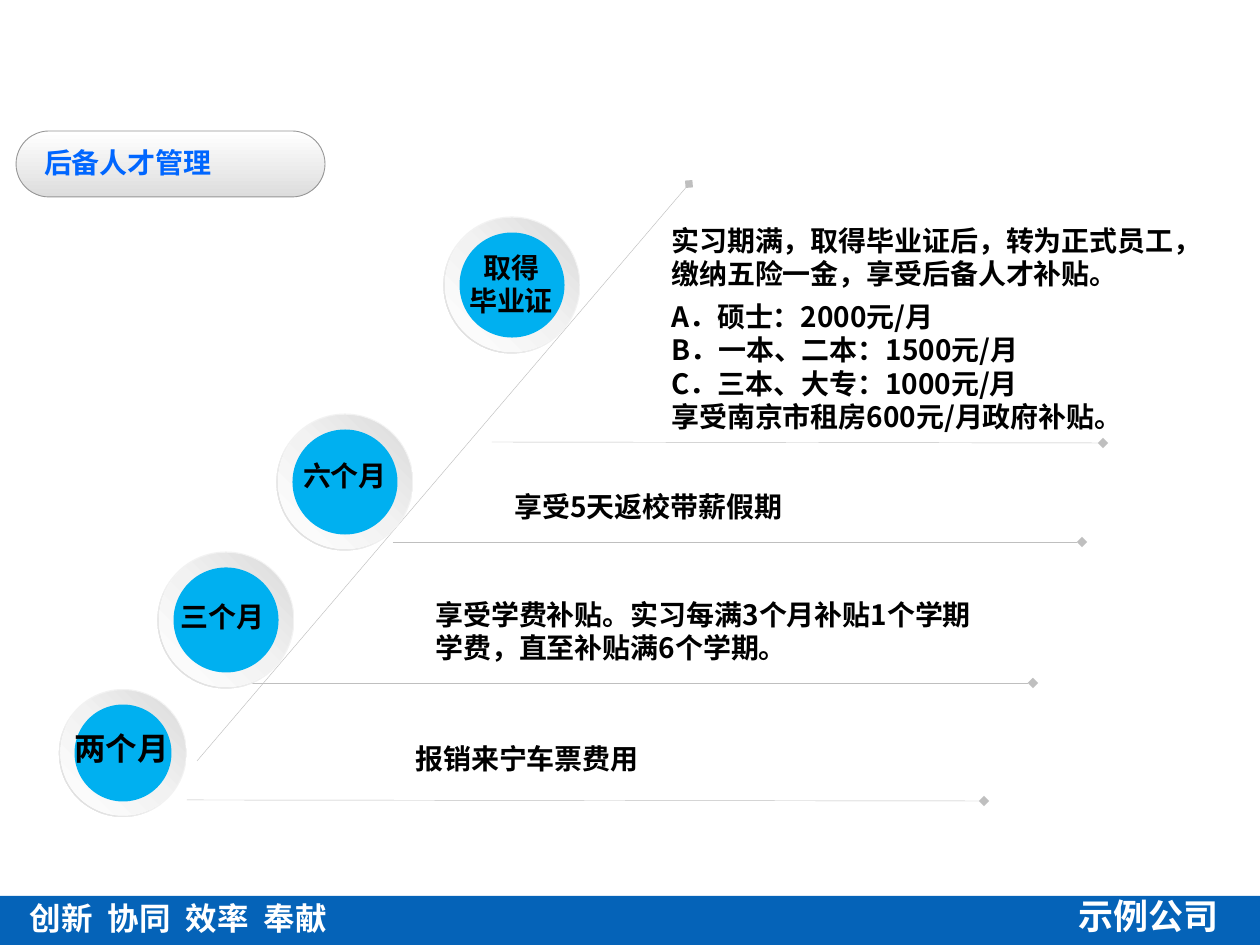
"""Build the reserve talent timeline slide."""
from lxml.etree import SubElement
from pptx import Presentation
from pptx.dml.color import RGBColor
from pptx.enum.shapes import MSO_CONNECTOR, MSO_SHAPE
from pptx.enum.text import MSO_ANCHOR, PP_ALIGN
from pptx.oxml.ns import qn
from pptx.util import Pt

PX = 914400 / 126
THEME = {
    "font": "Noto Sans CJK SC",
    "ink": "000000", "title": "0066FF", "white": "FFFFFF",
    "bar": "0563B8", "disc": "00B0F0", "line": "BFBFBF", "border": "969696",
    "body": 16, "large": 18, "brand": 20,
    "pill": (90, [(0, "FFFFFF"), (100, "DDDDDD")]),
    "rim": (135, [(0, "F2F2F2"), (55, "F2F2F2"), (100, "D9D9D9")]),
    "ring": (315, [(0, "FFFFFF"), (51, "F2F2F2"), (100, "D9D9D9")]),
}
TITLE = "后备人才管理"
PILL = (16, 131, 309, 66)
BAR = (0, 896, 1260, 49)
VALUES = ("创新", "协同", "效率", "奉献")
VALUES_BOX, VALUE_PITCH = (19, 893, 455, 49), 78
BRAND, BRAND_BOX = "示例公司", (1066, 888, 179, 55)
DIAGONAL = (197, 761, 689, 184)
STAGES = [
    {"center": (123, 753), "sizes": (128, 125, 97), "label": ["两个月"],
     "label_box": (62, 723, 129, 45), "size": "large", "align": PP_ALIGN.LEFT,
     "text": ["报销来宁车票费用"], "text_box": (403, 735, 512, 47),
     "rule": (187, 800, 984, 801)},
    {"center": (226, 620), "sizes": (137, 134, 105), "label": ["三个月"],
     "label_box": (168, 593, 127, 47), "size": "body", "align": PP_ALIGN.LEFT,
     "text": ["享受学费补贴。实习每满3个月补贴1个学期学费，直至补贴满6个学期。"],
     "text_box": (423, 591, 581, 81), "rule": (227, 683, 1033, 683)},
    {"center": (345, 482), "sizes": (137, 134, 105), "label": ["六个月"],
     "label_box": (286, 452, 118, 47), "size": "body", "align": PP_ALIGN.CENTER,
     "text": ["享受5天返校带薪假期"], "text_box": (502, 483, 462, 47),
     "rule": (393, 542, 1082, 542)},
    {"center": (512, 285), "sizes": (137, 134, 105), "label": ["取得", "毕业证"],
     "label_box": (452, 244, 118, 81), "size": "body", "align": PP_ALIGN.CENTER,
     "text": ["实习期满，取得毕业证后，转为正式员工，缴纳五险一金，享受后备人才补贴。",
              "A．硕士：2000元/月", "B．一本、二本：1500元/月",
              "C．三本、大专：1000元/月", "享受南京市租房600元/月政府补贴。"],
     "text_box": (659, 217, 552, 227), "rule": (492, 442, 1103, 443)},
]


def emu(values):
    return [round(v * PX) for v in values]


def color(name):
    return RGBColor.from_string(THEME[name])


def set_attrs(obj, values):
    for name, value in values.items():
        setattr(obj, name, value)


def paint(sp, name):
    if isinstance(THEME[name], str):
        sp.fill.solid()
        sp.fill.fore_color.rgb = color(name)
        return
    angle, stops = THEME[name]
    sp.fill.gradient()
    sp.fill.gradient_angle = 360 - angle
    stop_list = sp._element.spPr.find(".//" + qn("a:gsLst"))
    for stop in list(stop_list):
        stop_list.remove(stop)
    for position, rgb in stops:
        stop = SubElement(stop_list, qn("a:gs"), pos=str(position * 1000))
        SubElement(stop, qn("a:srgbClr"), val=rgb)


def add_shape(s, kind, box, fill, adjust=None, border=None):
    sp = s.shapes.add_shape(kind, *emu(box))
    sp.shadow.inherit = False
    paint(sp, fill)
    if adjust is not None:
        sp.adjustments[0] = adjust
    if border:
        sp.line.color.rgb = color(border)
        sp.line.width = Pt(0.5)
    else:
        sp.line.fill.background()
    return sp


def write(tf, lines, size="body", ink="ink", align=PP_ALIGN.LEFT):
    tf.word_wrap = True
    for i, line in enumerate(lines):
        p = tf.paragraphs[0] if i == 0 else tf.add_paragraph()
        p.alignment = align
        r = p.add_run()
        r.text = line
        set_attrs(r.font, {"name": THEME["font"], "size": Pt(THEME[size]), "bold": True})
        r.font.color.rgb = color(ink)
        SubElement(r._r.get_or_add_rPr(), qn("a:ea"), typeface=THEME["font"])


def add_text(s, box, lines, **style):
    tf = s.shapes.add_textbox(*emu(box)).text_frame
    write(tf, lines, **style)
    return tf


def add_line(s, ends):
    line = s.shapes.add_connector(MSO_CONNECTOR.STRAIGHT, *emu(ends))
    line.line.color.rgb = color("line")
    line.line.width = Pt(0.25)
    SubElement(line.line._get_or_add_ln(), qn("a:tailEnd"), type="diamond")
    SubElement(line._element.spPr, qn("a:effectLst"))


def add_footer(s):
    add_shape(s, MSO_SHAPE.RECTANGLE, BAR, "bar")
    tf = add_text(s, VALUES_BOX, ["\t".join(VALUES)], size="large", ink="white")
    set_attrs(tf, {"vertical_anchor": MSO_ANCHOR.MIDDLE, "margin_left": emu([11])[0]})
    tabs = SubElement(tf.paragraphs[0]._p.get_or_add_pPr(), qn("a:tabLst"))
    for i in range(1, len(VALUES)):
        SubElement(tabs, qn("a:tab"), pos=str(emu([i * VALUE_PITCH])[0]), algn="l")
    add_text(s, BRAND_BOX, [BRAND], size="brand", ink="white")


def add_title(s):
    add_shape(s, MSO_SHAPE.ROUNDED_RECTANGLE, PILL, "pill", 0.5, "border")
    title = s.shapes.title
    set_attrs(title, dict(zip(("left", "top", "width", "height"), emu(PILL))))
    s.shapes._spTree.append(title._element)
    write(title.text_frame, [TITLE], ink="title")
    set_attrs(title.text_frame, {"vertical_anchor": MSO_ANCHOR.MIDDLE,
                                 "margin_left": emu([28])[0]})
    title.text_frame.paragraphs[0].line_spacing = 0.9


def add_stage(s, stage):
    cx, cy = stage["center"]
    looks = ((MSO_SHAPE.DONUT, "rim", 0.05), (MSO_SHAPE.OVAL, "ring", None),
             (MSO_SHAPE.OVAL, "disc", None))
    for d, (kind, fill, adjust) in zip(stage["sizes"], looks):
        add_shape(s, kind, (cx - d / 2, cy - d / 2, d, d), fill, adjust)
    add_text(s, stage["label_box"], stage["label"], size=stage["size"], align=stage["align"])
    tf = add_text(s, stage["text_box"], stage["text"])
    if len(stage["text"]) > 1:
        tf.paragraphs[0].space_after = Pt(5)


def main():
    prs = Presentation()
    set_attrs(prs, dict(zip(("slide_width", "slide_height"), emu((1260, 945)))))
    s = prs.slides.add_slide(prs.slide_layouts[5])
    add_footer(s)
    add_title(s)
    for ends in [DIAGONAL] + [stage["rule"] for stage in STAGES]:
        add_line(s, ends)
    for stage in STAGES:
        add_stage(s, stage)
    prs.save("out.pptx")


if __name__ == "__main__":
    main()
